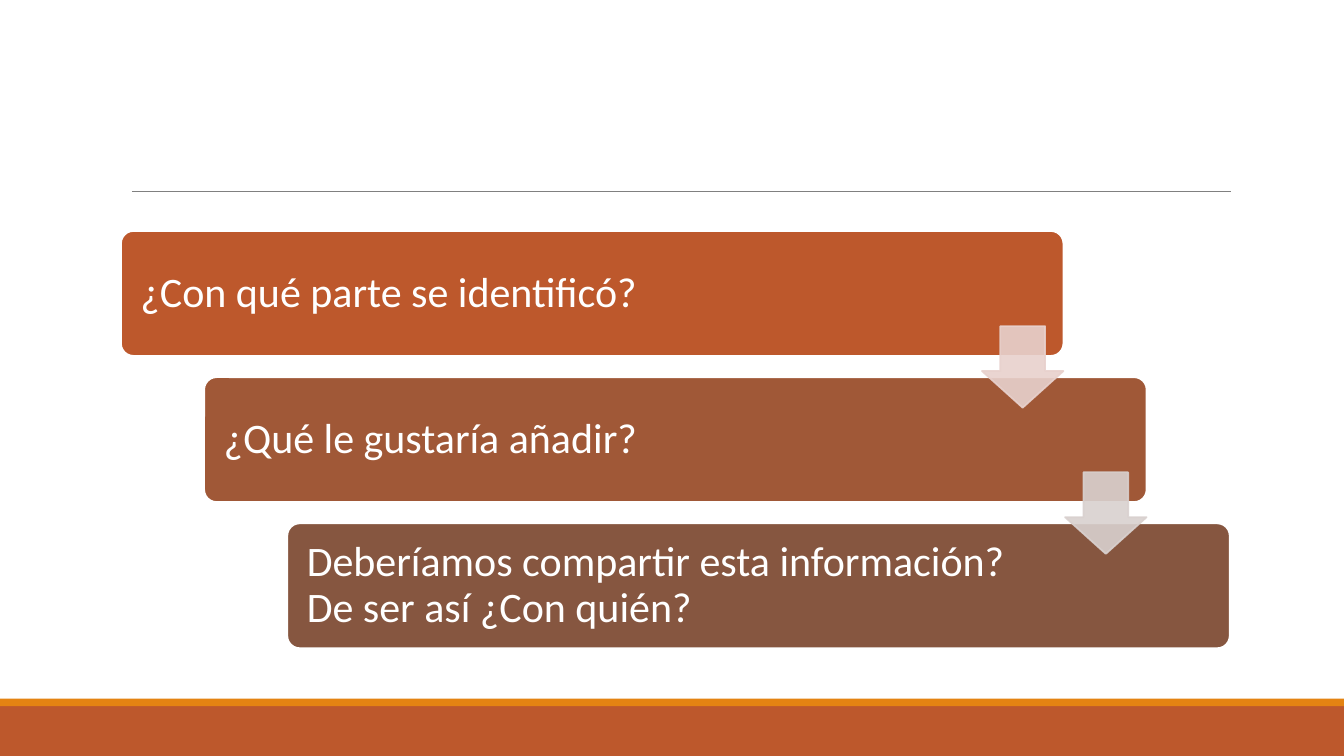
from lxml import etree
from pptx import Presentation
from pptx.dml.color import RGBColor
from pptx.enum.shapes import MSO_CONNECTOR, MSO_SHAPE
from pptx.enum.text import MSO_ANCHOR, PP_ALIGN
from pptx.oxml.ns import qn
from pptx.util import Pt

RECTANGLE = MSO_SHAPE.RECTANGLE
ROUNDED = MSO_SHAPE.ROUNDED_RECTANGLE
DOWN_ARROW = MSO_SHAPE.DOWN_ARROW
STRAIGHT = MSO_CONNECTOR.STRAIGHT
MIDDLE = MSO_ANCHOR.MIDDLE
LEFT = PP_ALIGN.LEFT

THEME = {
    "font": "Calibri",
    "size": 30,
    "white": "FFFFFF",
    "rule": "808080",
    "footer": "BD582C",
    "accent": "E48312",
    "steps": ["BD582C", "A05837", "865640"],
    "arrows": ["E8D1CD", "D9D1CF"],
}
QUESTIONS = [
    "¿Con qué parte se identificó?",
    "¿Qué le gustaría añadir?",
    "Deberíamos compartir esta información? De ser así ¿Con quién?",
]
STEP_X, STEP_Y = 59.4, 104.4


def add_filled(kind, left, top, width, height, fill, line=None):
    shape = slide.shapes.add_shape(kind, Pt(left), Pt(top), Pt(width), Pt(height))
    shape.shadow.inherit = False
    shape.fill.solid()
    shape.fill.fore_color.rgb = RGBColor.from_string(fill)
    if line:
        shape.line.color.rgb = RGBColor.from_string(line)
        shape.line.width = Pt(1.25)
    else:
        shape.line.fill.background()
    return shape


presentation = Presentation()
presentation.slide_width, presentation.slide_height = Pt(960), Pt(540)
slide = presentation.slides.add_slide(presentation.slide_layouts[6])

add_filled(RECTANGLE, 0, 504, 960, 36, THEME["footer"])
add_filled(RECTANGLE, 0, 499, 960, 5.5, THEME["accent"])

rule = slide.shapes.add_connector(STRAIGHT, Pt(94.3), Pt(136.8), Pt(879), Pt(136.8))
rule.line.color.rgb = RGBColor.from_string(THEME["rule"])
rule.line.width = Pt(0.5)
etree.SubElement(rule._element.spPr, qn("a:effectLst"))

frame_format = {
    "word_wrap": True,
    "vertical_anchor": MIDDLE,
    "margin_left": Pt(11.3),
    "margin_right": Pt(129),
    "margin_top": Pt(11.3),
    "margin_bottom": Pt(11.3),
}
font_format = {"name": THEME["font"], "size": Pt(THEME["size"])}

for index, (question, color) in enumerate(zip(QUESTIONS, THEME["steps"])):
    step = add_filled(ROUNDED, 86.4 + index * STEP_X, 165 + index * STEP_Y,
                      673.2, 89.2, color, THEME["white"])
    step.adjustments[0] = 0.1
    for name, value in frame_format.items():
        setattr(step.text_frame, name, value)
    paragraph = step.text_frame.paragraphs[0]
    paragraph.alignment = LEFT
    paragraph.line_spacing = 0.9
    run = paragraph.add_run()
    run.text = question
    for name, value in font_format.items():
        setattr(run.font, name, value)
    run.font.color.rgb = RGBColor.from_string(THEME["white"])

for index, color in enumerate(THEME["arrows"]):
    arrow = add_filled(DOWN_ARROW, 701.4 + index * STEP_X, 233 + index * STEP_Y,
                       58.2, 58.2, color, color)
    arrow.adjustments[0] = 0.55
    arrow.adjustments[1] = 0.45
    for paint in arrow._element.spPr.iter(qn("a:srgbClr")):
        etree.SubElement(paint, qn("a:alpha"), val="90000")

presentation.save("out.pptx")
